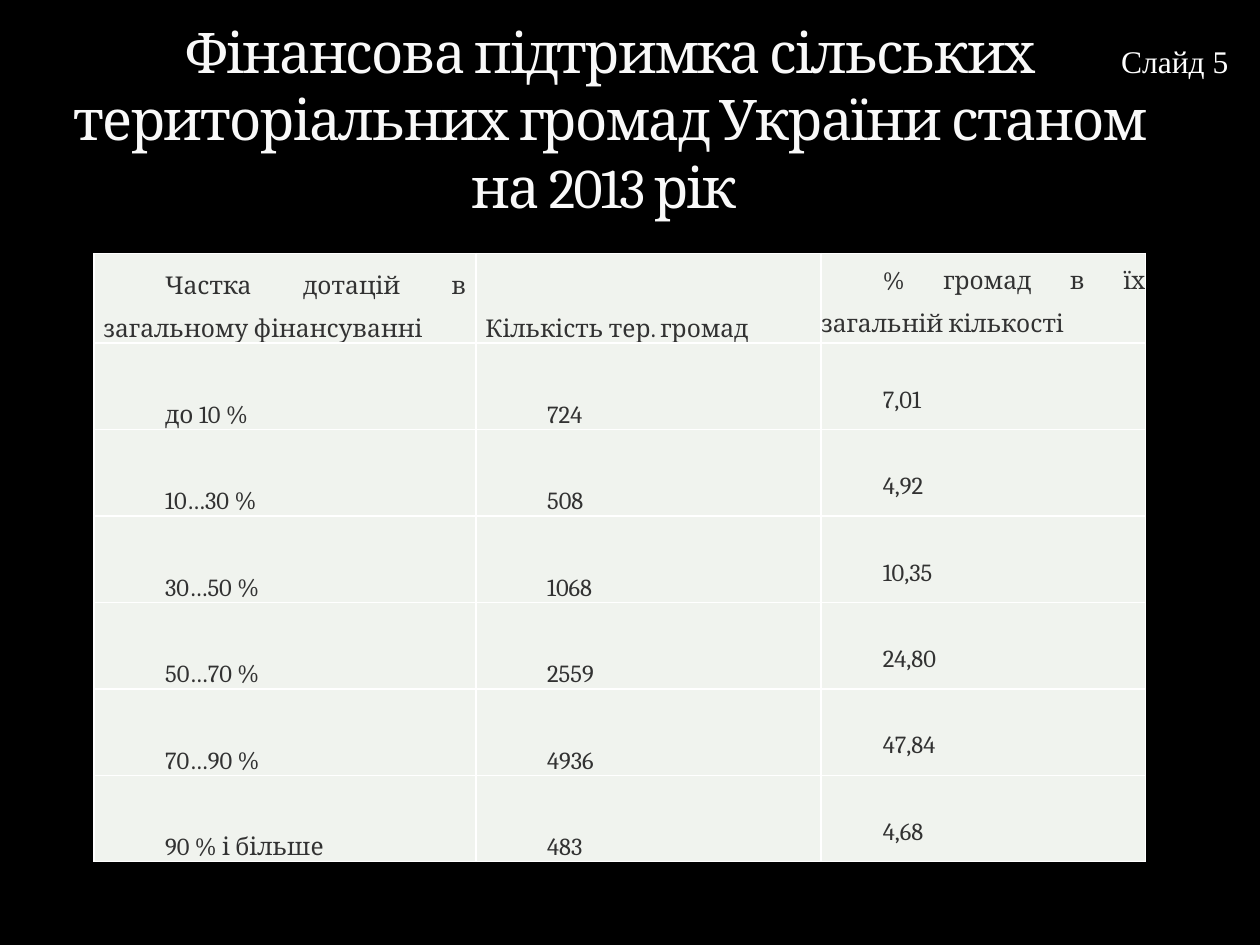
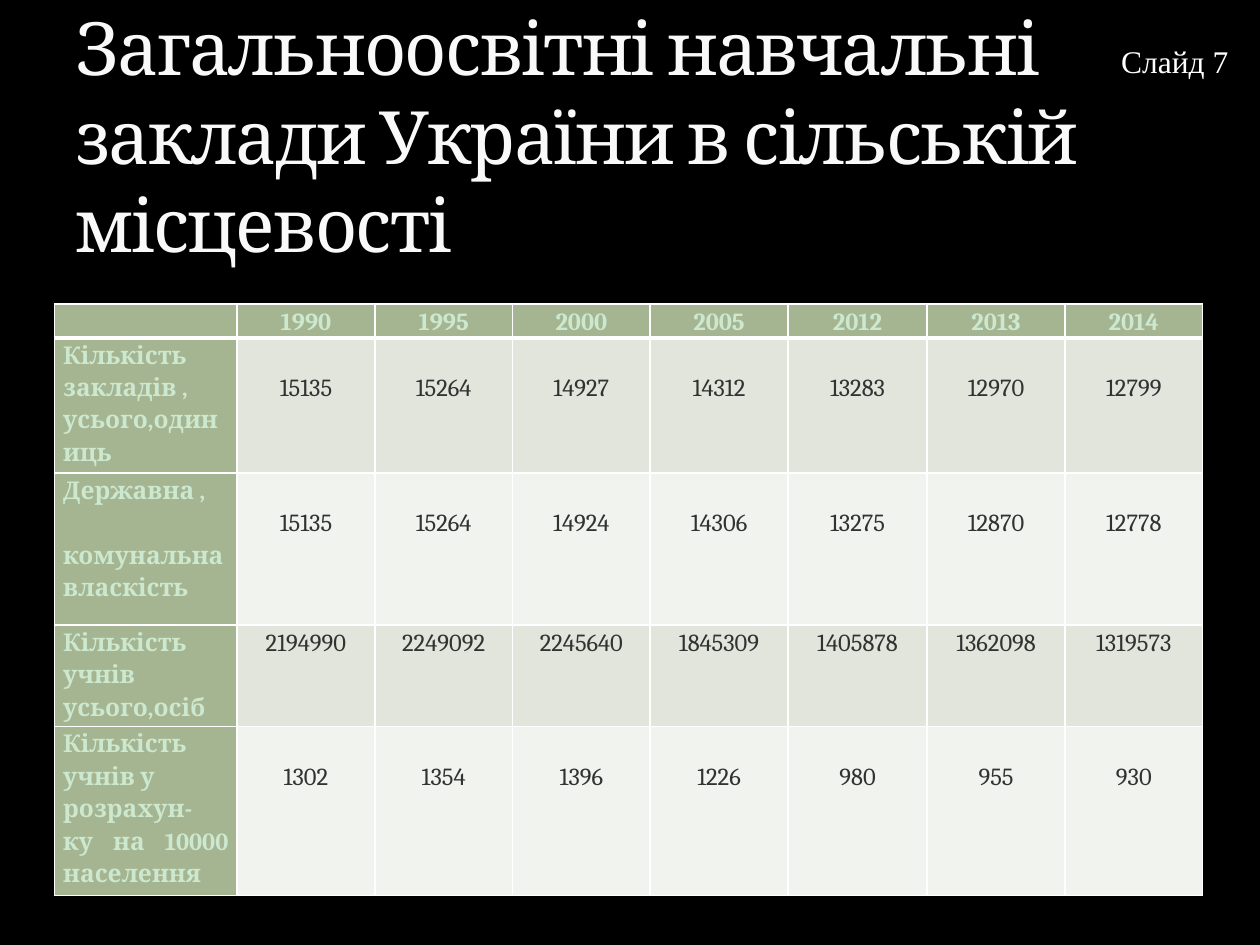
from dataclasses import dataclass

from lxml import etree
from pptx import Presentation
from pptx.dml.color import RGBColor
from pptx.enum import text as t
from pptx.oxml.ns import qn
from pptx.util import Pt

COLORS = {
    "background": "000000",
    "title": "F9F9F9",
    "white": "FFFFFF",
    "ink": "323232",
    "mint": "CCE8CF",
    "header": "A5B592",
    "band": "E1E5DC",
    "pale": "F0F3EE",
}
BODY_FONT = "Cambria"
LABEL_FONT = "Times New Roman"
LEFT, CENTER, JUSTIFY = t.PP_ALIGN.LEFT, t.PP_ALIGN.CENTER, t.PP_ALIGN.JUSTIFY
TOP, BOTTOM = t.MSO_ANCHOR.TOP, t.MSO_ANCHOR.BOTTOM
INDENT = 35.3
LINE = 18.5  # height of one line in the schools table


@dataclass(frozen=True)
class Box:
    left: float
    top: float
    width: float
    height: float

    def lengths(self):
        return [Pt(value) for value in (self.left, self.top, self.width, self.height)]


@dataclass(frozen=True)
class TextStyle:
    size: float
    color: str
    font: str = BODY_FONT
    bold: bool = False
    align: t.PP_ALIGN = LEFT
    line_spacing: float = 1.0
    indent: float = 0


@dataclass(frozen=True)
class Line:
    text: str
    align: t.PP_ALIGN = JUSTIFY
    space_before: float = 0


@dataclass(frozen=True)
class CellStyle:
    fill: str
    text: TextStyle
    margins: tuple = (5, 0, 5, 0)  # left, top, right, bottom
    anchor: t.MSO_ANCHOR = TOP


def style_paragraph(paragraph, style: TextStyle) -> None:
    paragraph.alignment = style.align
    paragraph.line_spacing = style.line_spacing
    font = paragraph.font
    font.name, font.size, font.bold = style.font, Pt(style.size), style.bold
    font.color.rgb = RGBColor.from_string(COLORS[style.color])
    if style.indent:
        paragraph._p.get_or_add_pPr().set("indent", str(Pt(style.indent)))


def add_text(slide, box: Box, text: str, style: TextStyle, wrap: bool = True,
             anchor: t.MSO_ANCHOR = TOP):
    frame = slide.shapes.add_textbox(*box.lengths()).text_frame
    frame.word_wrap, frame.vertical_anchor = wrap, anchor
    paragraph = frame.paragraphs[0]
    paragraph.text = text
    style_paragraph(paragraph, style)
    return paragraph


def add_slide(presentation, title: str, box: Box, size: float, align: t.PP_ALIGN,
              label: str):
    """Dark slide with a tightly spaced title and a label at top right."""
    slide = presentation.slides.add_slide(presentation.slide_layouts[6])
    slide.background.fill.solid()
    slide.background.fill.fore_color.rgb = RGBColor.from_string(COLORS["background"])
    paragraph = add_text(slide, box, title, TextStyle(size, "title", align=align),
                         anchor=BOTTOM)
    paragraph.runs[0].font._element.set("spc", "-100")
    add_text(slide, Box(633.6, 20.2, 76.3, 28.8), label,
             TextStyle(18, "white", LABEL_FONT), wrap=False)
    return slide


def set_borders(cell, widths: dict) -> None:
    properties = cell._tc.get_or_add_tcPr()
    for position, side in enumerate("LRTB"):
        line = etree.Element(qn(f"a:ln{side}"), w=str(Pt(widths.get(side, 1))))
        fill = etree.SubElement(line, qn("a:solidFill"))
        etree.SubElement(fill, qn("a:srgbClr"), val=COLORS["white"])
        properties.insert(position, line)


def fill_cell(cell, lines: list, style: CellStyle, borders: dict) -> None:
    cell.fill.solid()
    cell.fill.fore_color.rgb = RGBColor.from_string(COLORS[style.fill])
    (cell.margin_left, cell.margin_top,
     cell.margin_right, cell.margin_bottom) = map(Pt, style.margins)
    cell.vertical_anchor = style.anchor
    for number, line in enumerate(lines):
        frame = cell.text_frame
        paragraph = frame.add_paragraph() if number else frame.paragraphs[0]
        style_paragraph(paragraph, style.text)
        paragraph.alignment = line.align
        if line.space_before:
            paragraph.space_before = Pt(line.space_before)
        if line.text:
            paragraph.add_run().text = line.text
        else:  # an empty cell must not stretch its row
            etree.SubElement(paragraph._p, qn("a:endParaRPr"),
                             sz=str(int(style.text.size * 100)))
    set_borders(cell, borders)


def add_grid(slide, left: float, top: float, widths: list, heights: list):
    box = Box(left, top, sum(widths), sum(heights))
    table = slide.shapes.add_table(len(heights), len(widths), *box.lengths()).table
    table.first_row = table.horz_banding = False
    for column, width in zip(table.columns, widths):
        column.width = Pt(width)
    for row, height in zip(table.rows, heights):
        row.height = Pt(height)
    return table


# Slide: financial support
SUPPORT_ROWS = [
    ("Частка дотацій в загальному фінансуванні", "Кількість тер. громад",
     "% громад в їх загальній кількості"),
    ("до 10 %", "724", "7,01"),
    ("10…30 %", "508", "4,92"),
    ("30…50 %", "1068", "10,35"),
    ("50…70 %", "2559", "24,80"),
    ("70…90 %", "4936", "47,84"),
    ("90 % і більше", "483", "4,68"),
]


def build_support_slide(presentation) -> None:
    slide = add_slide(
        presentation,
        "Фінансова підтримка сільських територіальних громад України станом на 2013 рік ",
        Box(24.5, 33.1, 648, 95.8), 32, CENTER, "Слайд 5")
    table = add_grid(slide, 53.7, 145, [218.3, 197.2, 185.4],
                     [49.4] * len(SUPPORT_ROWS))
    for r, row in enumerate(SUPPORT_ROWS):
        for c, value in enumerate(row):
            indent = 0 if (r, c) == (0, 1) else INDENT
            text = TextStyle(14, "ink", align=JUSTIFY, line_spacing=1.5, indent=indent)
            if c == 2:
                style = CellStyle("pale", text, (0, 16.5 if r else 0, 0, 0))
            else:
                style = CellStyle("pale", text, (5.4, 0.7, 5.4, 0), BOTTOM)
            fill_cell(table.cell(r, c), [Line(value)], style, {})


# Slide: schools
YEARS = [1990, 1995, 2000, 2005, 2012, 2013, 2014]
SCHOOL_ROWS = [
    ([Line("Кількість закладів , усього,одиниць", LEFT)],
     [15135, 15264, 14927, 14312, 13283, 12970, 12799]),
    ([Line("Державна ,"), Line("комунальна власкість", space_before=LINE)],
     [15135, 15264, 14924, 14306, 13275, 12870, 12778]),
    ([Line("Кількість учнів", LEFT), Line("усього,осіб")],
     [2194990, 2249092, 2245640, 1845309, 1405878, 1362098, 1319573]),
    ([Line("Кількість учнів у розрахун-", LEFT), Line("ку на 10000 населення")],
     [1302, 1354, 1396, 1226, 980, 955, 930]),
]
PUPILS_ROW = 3  # its values start on the first line


def build_schools_slide(presentation) -> None:
    slide = add_slide(
        presentation,
        "Загальноосвітні навчальні заклади України в сільській місцевості",
        Box(36, 21.6, 648, 134.6), 42, LEFT, "Слайд 7")
    widths = [104.4] + [78.7] * len(YEARS)
    widths[5] = 79.6
    table = add_grid(slide, 31.1, 173.7, widths, [19.4, 77.1, 86.9, 57.7, 96.6])
    heading = CellStyle("header", TextStyle(14, "mint", bold=True, line_spacing=1.15))
    number = TextStyle(14, "ink", line_spacing=1.15)

    for c, year in enumerate(["", *YEARS]):
        fill_cell(table.cell(0, c), [Line(str(year), CENTER)], heading, {"B": 3})
    for r, (label, values) in enumerate(SCHOOL_ROWS, start=1):
        borders = {"T": 3} if r == 1 else {}
        fill_cell(table.cell(r, 0), label, heading, borders)
        margin_top = 0 if r == PUPILS_ROW else LINE
        style = CellStyle("band" if r % 2 else "pale", number, (5, margin_top, 5, 0))
        for c, value in enumerate(values, start=1):
            fill_cell(table.cell(r, c), [Line(str(value), CENTER)], style, borders)


def main() -> None:
    presentation = Presentation()
    presentation.slide_width, presentation.slide_height = Pt(720), Pt(540)
    build_support_slide(presentation)
    build_schools_slide(presentation)
    presentation.save("out.pptx")


if __name__ == "__main__":
    main()
